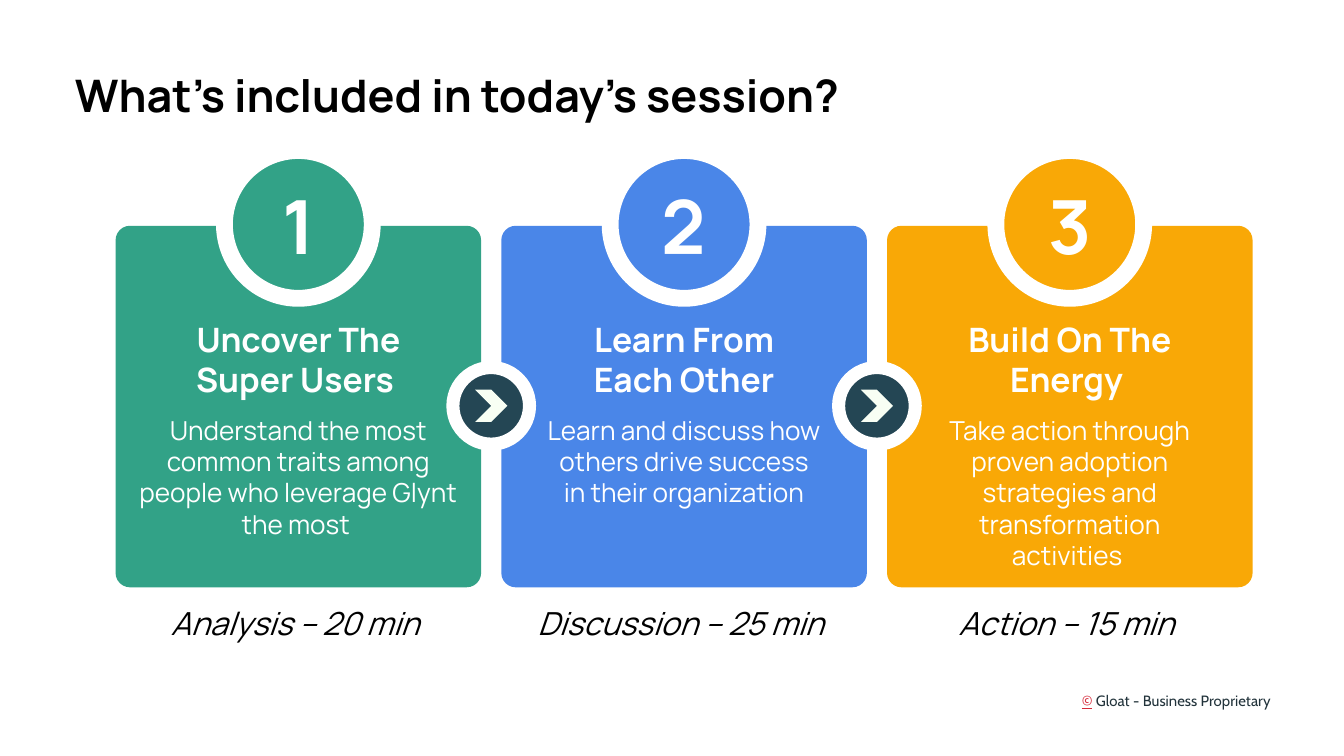
from dataclasses import dataclass

from pptx import Presentation
from pptx import util as u
from pptx.dml.color import RGBColor
from pptx.enum import shapes, text


@dataclass(frozen=True)
class Theme:
    font: str = "Manrope"
    footer_font: str = "Cabin"
    white: str = "FFFFFF"
    black: str = "000000"
    navy: str = "244654"
    cream: str = "F8FFF4"
    red: str = "D52839"
    slate: str = "22333B"
    green: str = "32A287"
    blue: str = "4A86E8"
    amber: str = "F9A806"
    title: int = 24
    number: int = 40
    heading: int = 18
    body: int = 14
    caption: int = 17
    footer: int = 8
    badge_ring: int = 9
    arrow_ring: int = 7


theme = Theme()
Kind = shapes.MSO_SHAPE
Align = text.PP_ALIGN

deck = Presentation()
deck.slide_width = u.Inches(10)
deck.slide_height = deck.slide_width * 9 // 16
page = deck.slides.add_slide(deck.slide_layouts[6])


def add_shape(kind, center, top, width, height, fill, ring=0):
    """Add a filled shape centred on a column, with a white ring if asked."""
    shape = page.shapes.add_shape(
        kind, *map(u.Inches, (center - width / 2, top, width, height)))
    shape.shadow.inherit = False
    shape.fill.solid()
    shape.fill.fore_color.rgb = RGBColor.from_string(fill)
    if ring:
        shape.line.color.rgb = RGBColor.from_string(theme.white)
        shape.line.width = u.Pt(ring)
    else:
        shape.line.fill.background()
    return shape


def add_text(area, spans, size, box=None, align=Align.CENTER, font=theme.font,
             bold=False, italic=False, middle=False, inset=(0.1, 0.1)):
    """Write (words, colour) spans in a box, or in a new one at center, top, width, height."""
    if box is None:
        center, top, width, height = area
        box = page.shapes.add_textbox(
            *map(u.Inches, (center - width / 2, top, width, height)))
    frame = box.text_frame
    frame.word_wrap = True
    frame.margin_left = frame.margin_right = u.Inches(inset[0])
    frame.margin_top = frame.margin_bottom = u.Inches(inset[1])
    frame.vertical_anchor = text.MSO_ANCHOR.MIDDLE if middle else text.MSO_ANCHOR.TOP
    para = frame.paragraphs[0]
    para.alignment = align
    for words, color in spans:
        span = para.add_run()
        span.text = words
        span.font.name, span.font.size = font, u.Pt(size)
        span.font.bold, span.font.italic = bold, italic
        span.font.color.rgb = RGBColor.from_string(color)
    return box


# Grid: three equal cards with a constant gap
LEFT, CARD_WIDTH, GAP = 0.86, 2.72, 0.15
CARD_TOP, CARD_HEIGHT = 1.68, 2.69
PITCH = CARD_WIDTH + GAP
BADGE, ARROW, CHEVRON = 1.1, 0.57, 0.24
ARROW_MIDDLE = 3.02
TIGHT = (0.07, 0.04)

steps = [
    (theme.green, "Uncover The Super Users ",
     "Understand the most common traits among people who leverage Glynt the most ",
     CARD_WIDTH, "Analysis – 20 min "),
    (theme.blue, "Learn From Each Other",
     "Learn and discuss how others drive success in their organization",
     2.19, "Discussion – 25 min "),
    (theme.amber, "Build On The Energy ",
     "Take action through proven adoption strategies and transformation activities ",
     2.19, "Action – 15 min "),
]

# Footer and title
footer = add_text((8.64, 5.08, 1.83, 0.34),
                  [("©", theme.red), (" Gloat - Business Proprietary", theme.slate)],
                  theme.footer, align=Align.RIGHT, font=theme.footer_font)
footer.text_frame.paragraphs[0].runs[0].font.underline = True
title_area = (3.84, 0.26, 6.76, 0.88)
title = add_shape(Kind.RECTANGLE, *title_area, theme.white)
add_text(title_area, [("What’s included in today’s session?", theme.black)],
         theme.title, box=title, align=Align.LEFT, bold=True, middle=True)

# Step cards
for index, (color, heading, body, body_width, caption) in enumerate(steps):
    center = LEFT + CARD_WIDTH / 2 + index * PITCH
    card = add_shape(Kind.ROUNDED_RECTANGLE, center, CARD_TOP, CARD_WIDTH, CARD_HEIGHT, color)
    card.adjustments[0] = 0.04
    add_text((center, 2.33, 2.08, 0.38), [(heading, theme.white)], theme.heading,
             bold=True, inset=TIGHT)
    add_text((center, 3.04, body_width, 1.21), [(body, theme.white)], theme.body,
             inset=TIGHT)
    add_shape(Kind.OVAL, center, 1.12, BADGE, BADGE, color, theme.badge_ring)
    add_text((center, 1.35, 0.65, 0.64), [(str(index + 1), theme.white)], theme.number,
             bold=True, middle=True)
    add_text((center, 4.44, 2.63, 0.39), [(caption, theme.black)], theme.caption,
             italic=True, middle=True)

# Arrows over the gaps between cards
for index in range(1, len(steps)):
    center = LEFT + index * PITCH - GAP / 2
    add_shape(Kind.OVAL, center, ARROW_MIDDLE - ARROW / 2, ARROW, ARROW,
              theme.navy, theme.arrow_ring)
    add_shape(Kind.CHEVRON, center, ARROW_MIDDLE - CHEVRON / 2, CHEVRON, CHEVRON, theme.cream)

deck.save("out.pptx")
